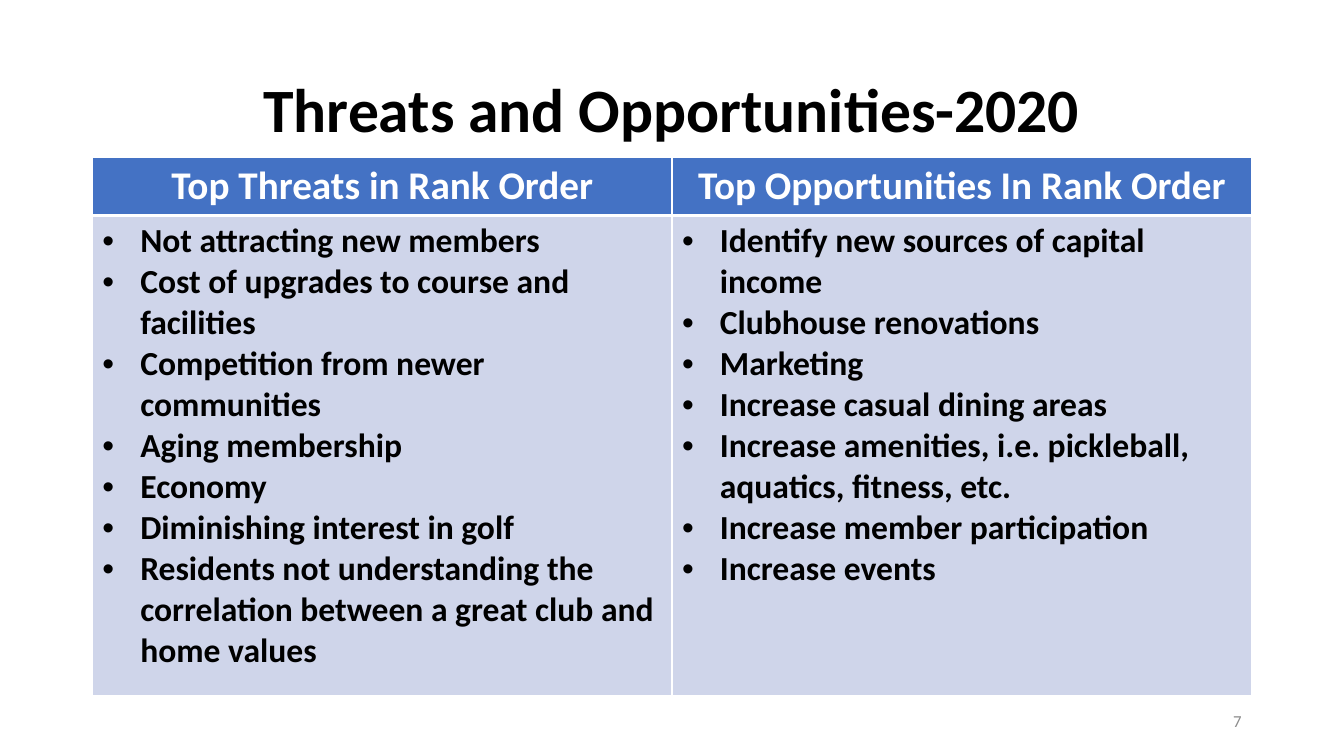
from dataclasses import dataclass

from lxml.etree import SubElement
from pptx import Presentation
from pptx.dml.color import RGBColor
from pptx.enum.text import MSO_ANCHOR, MSO_AUTO_SIZE, PP_ALIGN
from pptx.oxml.ns import qn
from pptx.util import Pt

PX = 9525  # EMU per px, 96 px to the inch


@dataclass(frozen=True)
class Theme:
    font: str = "Calibri"
    black: str = "000000"
    white: str = "FFFFFF"
    header_fill: str = "4472C4"
    body_fill: str = "CFD5EA"
    grey: str = "8C8C8C"
    title_size: int = 44
    header_size: int = 28
    body_size: int = 24
    number_size: int = 12


THEME = Theme()
COLUMNS = {
    "Top Threats in Rank Order": [
        "Not attracting new members",
        "Cost of upgrades to course and facilities",
        "Competition from newer communities",
        "Aging membership",
        "Economy",
        "Diminishing interest in golf",
        "Residents not understanding the correlation between a great club and home values",
    ],
    "Top Opportunities In Rank Order": [
        "Identify new sources of capital income",
        "Clubhouse renovations",
        "Marketing",
        "Increase casual dining areas",
        "Increase amenities, i.e. pickleball, aquatics, fitness, etc.",
        "Increase member participation",
        "Increase events",
    ],
}
LEFT, WIDTH = 88, 1104
TABLE_TOP = 150
ROW_HEIGHTS = [55, 457]
BULLET_INDENT = 36


def style_text(frame, size, color, align, bold=True):
    for paragraph in frame.paragraphs:
        paragraph.alignment = align
        for run in paragraph.runs:
            run.font.name = THEME.font
            run.font.size = Pt(size)
            run.font.bold = bold
            run.font.color.rgb = RGBColor.from_string(color)


def style_cell(cell, fill, top, bottom):
    """Give the cell white borders, with top and bottom widths in points, and a fill."""
    properties = cell._tc.get_or_add_tcPr()
    for side, width in {"lnL": 1, "lnR": 1, "lnT": top, "lnB": bottom}.items():
        border = SubElement(properties, qn(f"a:{side}"), w=str(Pt(width)))
        SubElement(SubElement(border, qn("a:solidFill")), qn("a:srgbClr"), val=THEME.white)
    cell.fill.solid()
    cell.fill.fore_color.rgb = RGBColor.from_string(fill)


prs = Presentation()
prs.slide_width, prs.slide_height = 1280 * PX, 720 * PX
slide = prs.slides.add_slide(prs.slide_layouts[5])

title = slide.shapes.title
title.left, title.top, title.width, title.height = LEFT * PX, 38 * PX, WIDTH * PX, 139 * PX
title.text_frame.text = "Threats and Opportunities-2020"
title.text_frame.auto_size = MSO_AUTO_SIZE.NONE
title.text_frame.vertical_anchor = MSO_ANCHOR.MIDDLE
title.text_frame.paragraphs[0].line_spacing = 0.9
style_text(title.text_frame, THEME.title_size, THEME.black, PP_ALIGN.CENTER)

rankings = slide.shapes.add_table(
    len(ROW_HEIGHTS), len(COLUMNS), LEFT * PX, TABLE_TOP * PX, WIDTH * PX, sum(ROW_HEIGHTS) * PX
).table
for row, height in zip(rankings.rows, ROW_HEIGHTS):
    row.height = height * PX

for column, (heading, entries) in enumerate(COLUMNS.items()):
    header = rankings.cell(0, column)
    header.text_frame.text = heading
    style_text(header.text_frame, THEME.header_size, THEME.white, PP_ALIGN.CENTER)
    style_cell(header, THEME.header_fill, top=1, bottom=3)

    body = rankings.cell(1, column)
    body.text_frame.text = "\n".join(entries)
    style_text(body.text_frame, THEME.body_size, THEME.black, PP_ALIGN.LEFT)
    style_cell(body, THEME.body_fill, top=3, bottom=1)
    for entry in body.text_frame.paragraphs:
        indents = entry._p.get_or_add_pPr()
        indents.set("marL", str(BULLET_INDENT * PX))
        indents.set("indent", str(-BULLET_INDENT * PX))
        SubElement(indents, qn("a:buFont"), typeface="Arial")
        SubElement(indents, qn("a:buChar"), char="•")

page_number = slide.shapes.add_textbox(904 * PX, 667 * PX, 288 * PX, 38 * PX).text_frame
page_number.word_wrap = True
page_number.vertical_anchor = MSO_ANCHOR.MIDDLE
page_number.text = "7"
style_text(page_number, THEME.number_size, THEME.grey, PP_ALIGN.RIGHT, bold=False)

prs.save("out.pptx")
